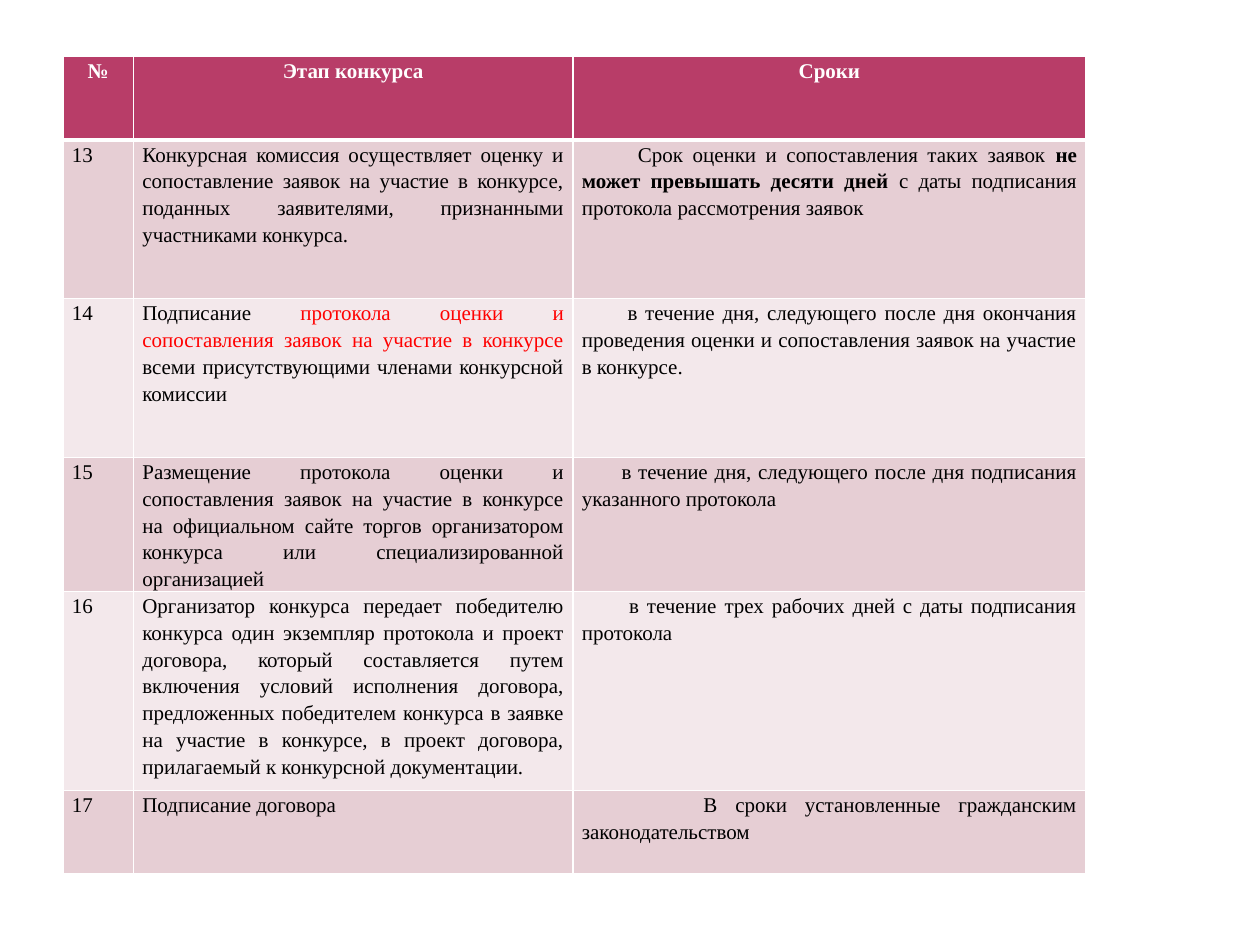
"""Build a slide with a table of contest stages and their deadlines."""
import lxml.etree
import pptx
import pptx.dml.color
import pptx.enum.text
import pptx.oxml.ns
import pptx.util

Cm, Pt = pptx.util.Cm, pptx.util.Pt
ALIGN = pptx.enum.text.PP_ALIGN
FONT, SIZE, SPACING = "Times New Roman", 12, 1.15
WHITE, BLACK, RED = "FFFFFF", "000000", "FF0000"
HEAD, BANDS = "B83D68", ("E6CED4", "F3E8EB")
LEFT, TOP = 1.27, 1.14
WIDTHS = (1.42, 8.86, 10.34)
HEIGHTS = (1.68, 3.2, 3.2, 2.7, 4.01, 1.68)
TITLES = ("№", "Этап конкурса", "Сроки")
FIRST = 13

# stage, term, first-line indent of the term in cm
ROWS = [
    ("Конкурсная комиссия осуществляет оценку и сопоставление заявок на участие "
     "в конкурсе, поданных заявителями, признанными участниками конкурса.",
     "Срок оценки и сопоставления таких заявок не может превышать десяти дней "
     "с даты подписания протокола рассмотрения заявок", 1.13),
    ("Подписание протокола оценки и сопоставления заявок на участие в конкурсе "
     "всеми присутствующими членами конкурсной комиссии",
     "в течение дня, следующего после дня окончания проведения оценки и "
     "сопоставления заявок на участие в конкурсе.", 0.92),
    ("Размещение протокола оценки и сопоставления заявок на участие в конкурсе "
     "на официальном сайте торгов организатором конкурса или "
     "специализированной организацией",
     "в течение дня, следующего после дня подписания указанного протокола", 0.8),
    ("Организатор конкурса передает победителю конкурса один экземпляр протокола "
     "и проект договора, который составляется путем включения условий исполнения "
     "договора, предложенных победителем конкурса в заявке на участие в конкурсе, "
     "в проект договора, прилагаемый к конкурсной документации.",
     "в течение трех рабочих дней с даты подписания протокола", 0.95),
    ("Подписание договора",
     "В сроки установленные гражданским законодательством", 2.45),
]
MARKS = {
    (1, 2): ("не может превышать десяти дней", BLACK, True),
    (2, 1): ("протокола оценки и сопоставления заявок на участие в конкурсе ",
             RED, False),
}


def paint(fill, color):
    fill.solid()
    fill.fore_color.rgb = pptx.dml.color.RGBColor.from_string(color)


def style(run, color, bold):
    run.font.name, run.font.size, run.font.bold = FONT, Pt(SIZE), bold
    paint(run.font.fill, color)


def border(cell, row):
    props = cell._tc.get_or_add_tcPr()
    wide = {0: "lnB", 1: "lnT"}.get(row)
    for side in ("lnL", "lnR", "lnT", "lnB"):
        line = lxml.etree.SubElement(props, pptx.oxml.ns.qn("a:" + side))
        line.set("w", str(Pt(3 if side == wide else 1)))
        fill = lxml.etree.SubElement(line, pptx.oxml.ns.qn("a:solidFill"))
        tint = lxml.etree.SubElement(fill, pptx.oxml.ns.qn("a:srgbClr"))
        tint.set("val", WHITE)


def write(cell, text, color, bold, align, mark=None, indent=0):
    para = cell.text_frame.paragraphs[0]
    para.alignment, para.line_spacing = align, SPACING
    if indent:
        props = para._p.get_or_add_pPr()
        props.set("marL", "0")
        props.set("indent", str(Cm(indent)))
    parts = [(text, color, bold)]
    if mark:
        before, after = text.split(mark[0])
        parts = [(before, color, bold), mark, (after, color, bold)]
    for words, tint, heavy in parts:
        run = para.add_run()
        run.text = words
        style(run, tint, heavy)


def main():
    deck = pptx.Presentation()
    deck.slide_width, deck.slide_height = Cm(25.4), Cm(19.05)
    slide = deck.slides.add_slide(deck.slide_layouts[6])
    lines = [(*TITLES, 0)]
    lines += [(str(FIRST + i), *row) for i, row in enumerate(ROWS)]
    table = slide.shapes.add_table(
        len(lines), len(WIDTHS), Cm(LEFT), Cm(TOP),
        Cm(sum(WIDTHS)), Cm(sum(HEIGHTS))).table
    table.horz_banding = False
    for col, width in zip(table.columns, WIDTHS):
        col.width = Cm(width)
    for r, (*texts, indent) in enumerate(lines):
        table.rows[r].height = Cm(HEIGHTS[r])
        top = r == 0
        for c, text in enumerate(texts):
            cell = table.cell(r, c)
            cell.margin_left = cell.margin_right = Cm(0.18)
            cell.margin_top = cell.margin_bottom = 0
            border(cell, r)
            paint(cell.fill, HEAD if top else BANDS[(r - 1) % 2])
            write(cell, text, WHITE if top else BLACK, top,
                  ALIGN.CENTER if top else ALIGN.JUSTIFY,
                  MARKS.get((r, c)), indent if c == 2 else 0)
    deck.save("out.pptx")


if __name__ == "__main__":
    main()
